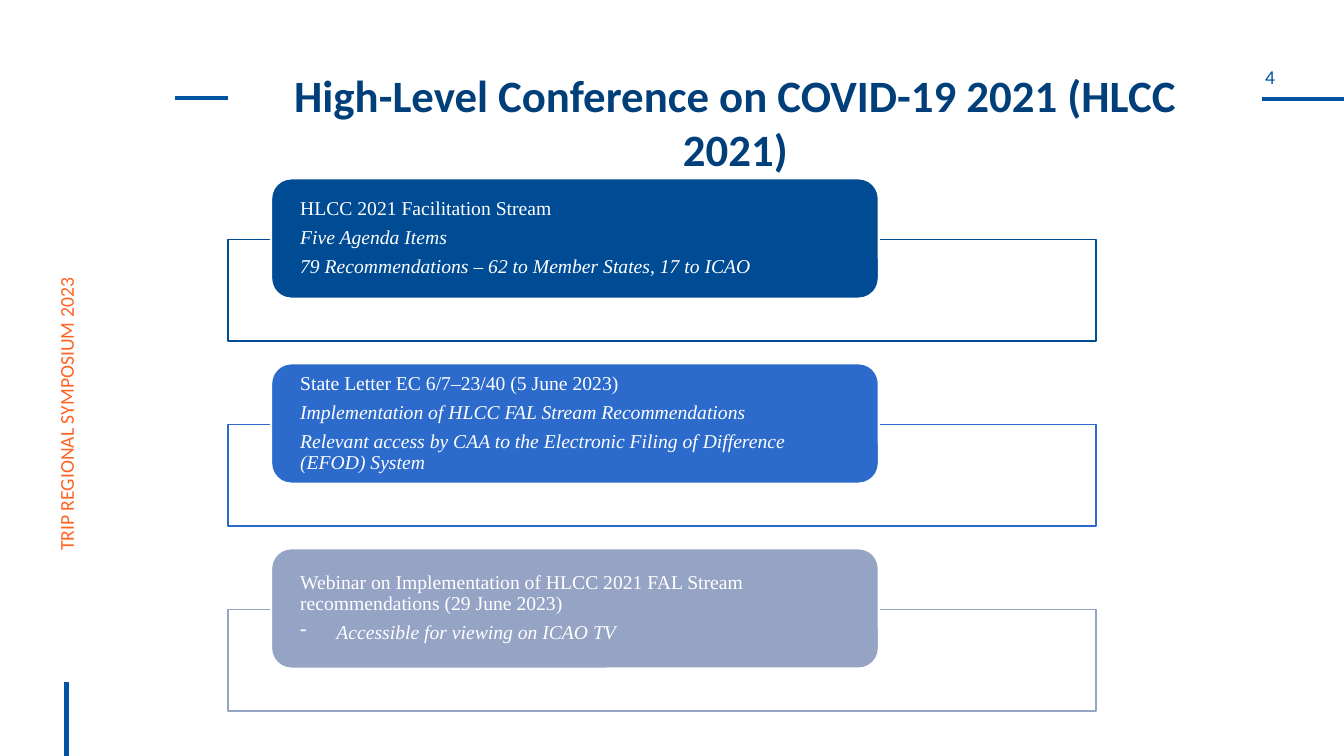
import dataclasses

import lxml.etree
import pptx
import pptx.dml.color
import pptx.enum.shapes
import pptx.enum.text
import pptx.oxml.ns
import pptx.util

WIDTH = pptx.util.Inches(13.33)
HEIGHT = pptx.util.Inches(7.5)
SHAPES = pptx.enum.shapes.MSO_SHAPE
ALIGN = pptx.enum.text.PP_ALIGN
ANCHOR = pptx.enum.text.MSO_ANCHOR


@dataclasses.dataclass(frozen=True)
class Theme:
    """Colours, fonts and type sizes of the slide."""
    rule: str = "0054A3"
    title: str = "003F7A"
    accent: str = "FF6221"
    paper: str = "FFFFFF"
    cards: tuple = ("004C94", "2C6BCB", "95A3C5")
    sans: str = "Calibri"
    serif: str = "Times New Roman"
    title_size: int = 32
    body_size: int = 14


@dataclasses.dataclass(frozen=True)
class Box:
    """A rectangle in percent of the slide's width and height."""
    left: float
    top: float
    width: float
    height: float

    def within(self, left, top, width, height):
        """Return the box at the given shares of this one."""
        return Box(self.left + left * self.width, self.top + top * self.height,
                   width * self.width, height * self.height)

    def place(self):
        """Return left, top, width and height in slide units."""
        return (int(WIDTH * self.left / 100), int(HEIGHT * self.top / 100),
                int(WIDTH * self.width / 100), int(HEIGHT * self.height / 100))


THEME = Theme()
TITLE = "High-Level Conference on COVID-19 2021 (HLCC 2021)"
CARDS = (
    ("HLCC 2021 Facilitation Stream",
     "Five Agenda Items",
     "79 Recommendations – 62 to Member States, 17 to ICAO"),
    ("State Letter EC 6/7–23/40 (5 June 2023)",
     "Implementation of HLCC FAL Stream Recommendations",
     "Relevant access by CAA to the Electronic Filing of Difference (EFOD) System"),
    ("Webinar on Implementation of HLCC 2021 FAL Stream recommendations (29 June 2023)",
     "- Accessible for viewing on ICAO TV"),
)


def rgb(colour):
    """Turn a hex string into a colour."""
    return pptx.dml.color.RGBColor.from_string(colour)


def style(para, font, size, colour, bold=False, italic=False):
    """Format every run of a paragraph."""
    for span in para.runs:
        span.font.name = font
        span.font.size = pptx.util.Pt(size)
        span.font.color.rgb = rgb(colour)
        span.font.bold = bold
        span.font.italic = italic


def add_rule(page, box):
    """Draw a thick line from the box's top left to its bottom right."""
    left, top, width, height = box.place()
    rule = page.shapes.add_connector(pptx.enum.shapes.MSO_CONNECTOR.STRAIGHT,
                                     left, top, left + width, top + height)
    rule.line.color.rgb = rgb(THEME.rule)
    rule.line.width = pptx.util.Pt(3)
    lxml.etree.SubElement(rule._element.spPr, pptx.oxml.ns.qn("a:effectLst"))


def add_panel(page, box, kind, fill, line, weight):
    """Draw a filled and outlined shape."""
    panel = page.shapes.add_shape(kind, *box.place())
    panel.shadow.inherit = False
    panel.fill.solid()
    panel.fill.fore_color.rgb = rgb(fill)
    panel.line.color.rgb = rgb(line)
    panel.line.width = pptx.util.Pt(weight)
    return panel


def add_title(page, box):
    """Place the title and the short rule before it."""
    add_rule(page, box.within(0, 0.32, 0.05, 0))
    title = page.shapes.title
    title.left, title.top, title.width, title.height = box.within(0.06, 0, 0.94, 1).place()
    frame = title.text_frame
    frame.text = TITLE
    frame.word_wrap = True
    frame.auto_size = pptx.enum.text.MSO_AUTO_SIZE.NONE
    frame.vertical_anchor = ANCHOR.TOP
    para = frame.paragraphs[0]
    para.alignment = ALIGN.CENTER
    style(para, THEME.sans, THEME.title_size, THEME.title, bold=True)


def add_page_number(page, box):
    """Place the page number above its rule."""
    add_rule(page, box.within(0.39, 1, 0.61, 0))
    number = page.shapes.add_textbox(*box.within(0, 0, 0.9, 0.97).place())
    frame = number.text_frame
    frame.margin_left = frame.margin_right = frame.margin_top = frame.margin_bottom = 0
    frame.text = "4"
    para = frame.paragraphs[0]
    para.alignment = ALIGN.CENTER
    style(para, THEME.sans, THEME.body_size, THEME.rule)


def add_side_label(page, box):
    """Place the upright event name and the rule under it."""
    add_rule(page, Box(4.95, 90.27, 0, 9.73))
    label = page.shapes.add_textbox(*box.place())
    label.rotation = 270
    frame = label.text_frame
    frame.word_wrap = True
    frame.text = "TRIP REGIONAL SYMPOSIUM 2023"
    para = frame.paragraphs[0]
    para.line_spacing = 0.9
    style(para, THEME.sans, THEME.body_size, THEME.accent)


def add_dash(para):
    """Give a paragraph a dash bullet with a hanging indent."""
    settings = para._p.get_or_add_pPr()
    indent = pptx.util.Inches(0.36)
    settings.set("marL", str(int(indent)))
    settings.set("indent", str(int(-indent)))
    bullet = lxml.etree.SubElement(settings, pptx.oxml.ns.qn("a:buChar"))
    bullet.set("char", "-")


def add_card(page, box, lines, colour):
    """Draw one outlined frame with a rounded text card over its top edge."""
    outline = add_panel(page, box.within(0, 0.33, 1, 0.55), SHAPES.RECTANGLE,
                        THEME.paper, colour, 1)
    tint = outline._element.spPr.find(".//" + pptx.oxml.ns.qn("a:srgbClr"))
    lxml.etree.SubElement(tint, pptx.oxml.ns.qn("a:alpha")).set("val", "90000")
    card = add_panel(page, box.within(0.05, 0, 0.7, 0.65), SHAPES.ROUNDED_RECTANGLE,
                     colour, THEME.paper, 1.5)
    frame = card.text_frame
    frame.word_wrap = True
    frame.vertical_anchor = ANCHOR.MIDDLE
    frame.margin_left = frame.margin_right = pptx.util.Inches(0.23)
    frame.margin_top = frame.margin_bottom = 0
    frame.text = "\n".join(line.removeprefix("- ") for line in lines)
    for index, (para, line) in enumerate(zip(frame.paragraphs, lines)):
        para.alignment = ALIGN.LEFT
        para.line_spacing = 0.9
        if index < len(lines) - 1:
            para.space_after = pptx.util.Pt(5.5)
        if line.startswith("- "):
            add_dash(para)
        style(para, THEME.serif, THEME.body_size, THEME.paper, italic=index > 0)


def add_cards(page, box):
    """Stack the cards in equal rows."""
    share = 1 / len(CARDS)
    for index, (lines, colour) in enumerate(zip(CARDS, THEME.cards)):
        add_card(page, box.within(0, index * share, 1, share), lines, colour)


def main():
    """Build and save the slide."""
    deck = pptx.Presentation()
    deck.slide_width, deck.slide_height = WIDTH, HEIGHT
    page = deck.slides.add_slide(deck.slide_layouts.get_by_name("Title Only"))
    add_page_number(page, Box(90, 8.53, 10, 4.53))
    add_side_label(page, Box(-9.08, 46.93, 28.28, 4.27))
    add_title(page, Box(13.05, 8.27, 78.62, 14.8))
    add_cards(page, Box(16.95, 23.6, 64.59, 73.4))
    deck.save("out.pptx")


if __name__ == "__main__":
    main()
